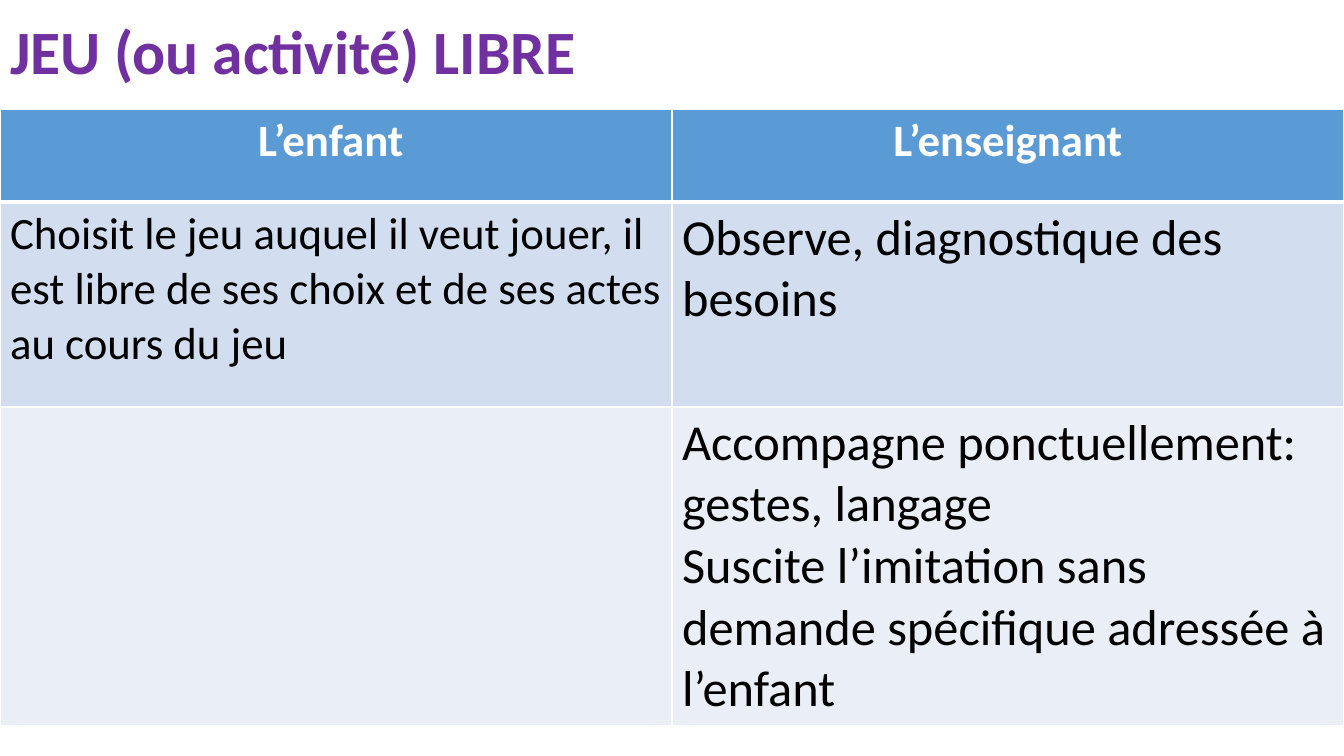
"""Build the slide that compares the child and the teacher during free play."""
import pptx
import pptx.util
import pptx.dml.color
import pptx.enum.text
import pptx.oxml

TITLE = "JEU (ou activité) LIBRE"
HEADERS = ["L’enfant ", "L’enseignant"]
ROWS = [
    [
        ["Choisit le jeu auquel il veut jouer, il est libre de ses choix et de ses actes au cours du jeu"],
        ["Observe, diagnostique des besoins"],
    ],
    [
        [],
        [
            "Accompagne ponctuellement: gestes, langage",
            "Suscite l’imitation sans demande spécifique adressée à l’enfant",
        ],
    ],
]
COLORS = {
    "title": "7030A0", "header": "5B9BD5", "band": "D2DEEF",
    "light": "EAEFF7", "white": "FFFFFF", "black": "000000",
}
FONT = "Calibri"
SLIDE_WIDTH, SLIDE_HEIGHT = 1344, 756
TITLE_WIDTH, TITLE_HEIGHT = 796, 109
ROW_HEIGHTS = [93, 205, 318]
ROW_FILLS = ["header", "band", "light"]
BODY_SIZES = [32, 36]
HEADER_SIZE = 32
EMU_PER_PX = 12192000 / SLIDE_WIDTH


def px(length):
    return pptx.util.Emu(round(length * EMU_PER_PX))


def rgb(name):
    return pptx.dml.color.RGBColor.from_string(COLORS[name])


def style(para, size, color, bold, align):
    para.font.name = FONT
    para.font.size = pptx.util.Pt(size)
    para.font.bold = bold
    para.font.color.rgb = rgb(color)
    para.alignment = align


def set_borders(cell, widths):
    properties = cell._tc.get_or_add_tcPr()
    for index, (side, width) in enumerate(widths.items()):
        line = pptx.oxml.parse_xml(
            f'<a:ln{side} xmlns:a="http://schemas.openxmlformats.org/drawingml/2006/main"'
            f' w="{pptx.util.Pt(width)}"><a:solidFill><a:srgbClr val="{COLORS["white"]}"/>'
            f'</a:solidFill></a:ln{side}>'
        )
        properties.insert(index, line)


def add_title(page):
    box = page.shapes.title
    box.left, box.top = px(0), px(0)
    box.width, box.height = px(TITLE_WIDTH), px(TITLE_HEIGHT)
    frame = box.text_frame
    frame.text = TITLE
    frame.word_wrap = True
    frame.auto_size = pptx.enum.text.MSO_AUTO_SIZE.NONE
    frame.vertical_anchor = pptx.enum.text.MSO_ANCHOR.MIDDLE
    para = frame.paragraphs[0]
    para.line_spacing = 0.9
    style(para, 44, "title", True, pptx.enum.text.PP_ALIGN.LEFT)


def add_comparison(page):
    content = [[[header] for header in HEADERS]] + ROWS
    table = page.shapes.add_table(
        len(content), len(HEADERS), px(0), px(TITLE_HEIGHT), px(SLIDE_WIDTH), px(sum(ROW_HEIGHTS))
    ).table
    for column in table.columns:
        column.width = px(SLIDE_WIDTH / len(HEADERS))
    for row_index, row in enumerate(content):
        table.rows[row_index].height = px(ROW_HEIGHTS[row_index])
        is_header = row_index == 0
        for column_index, lines in enumerate(row):
            cell = table.cell(row_index, column_index)
            cell.fill.solid()
            cell.fill.fore_color.rgb = rgb(ROW_FILLS[row_index])
            set_borders(cell, {
                "L": 1, "R": 1, "T": 3 if row_index == 1 else 1, "B": 3 if is_header else 1,
            })
            cell.text = "\n".join(lines)
            for para in cell.text_frame.paragraphs:
                if is_header:
                    style(para, HEADER_SIZE, "white", True, pptx.enum.text.PP_ALIGN.CENTER)
                else:
                    style(para, BODY_SIZES[column_index], "black", False, pptx.enum.text.PP_ALIGN.LEFT)


def main():
    deck = pptx.Presentation()
    deck.slide_width, deck.slide_height = px(SLIDE_WIDTH), px(SLIDE_HEIGHT)
    page = deck.slides.add_slide(deck.slide_layouts.get_by_name("Title Only"))
    add_title(page)
    add_comparison(page)
    deck.save("out.pptx")


if __name__ == "__main__":
    main()
